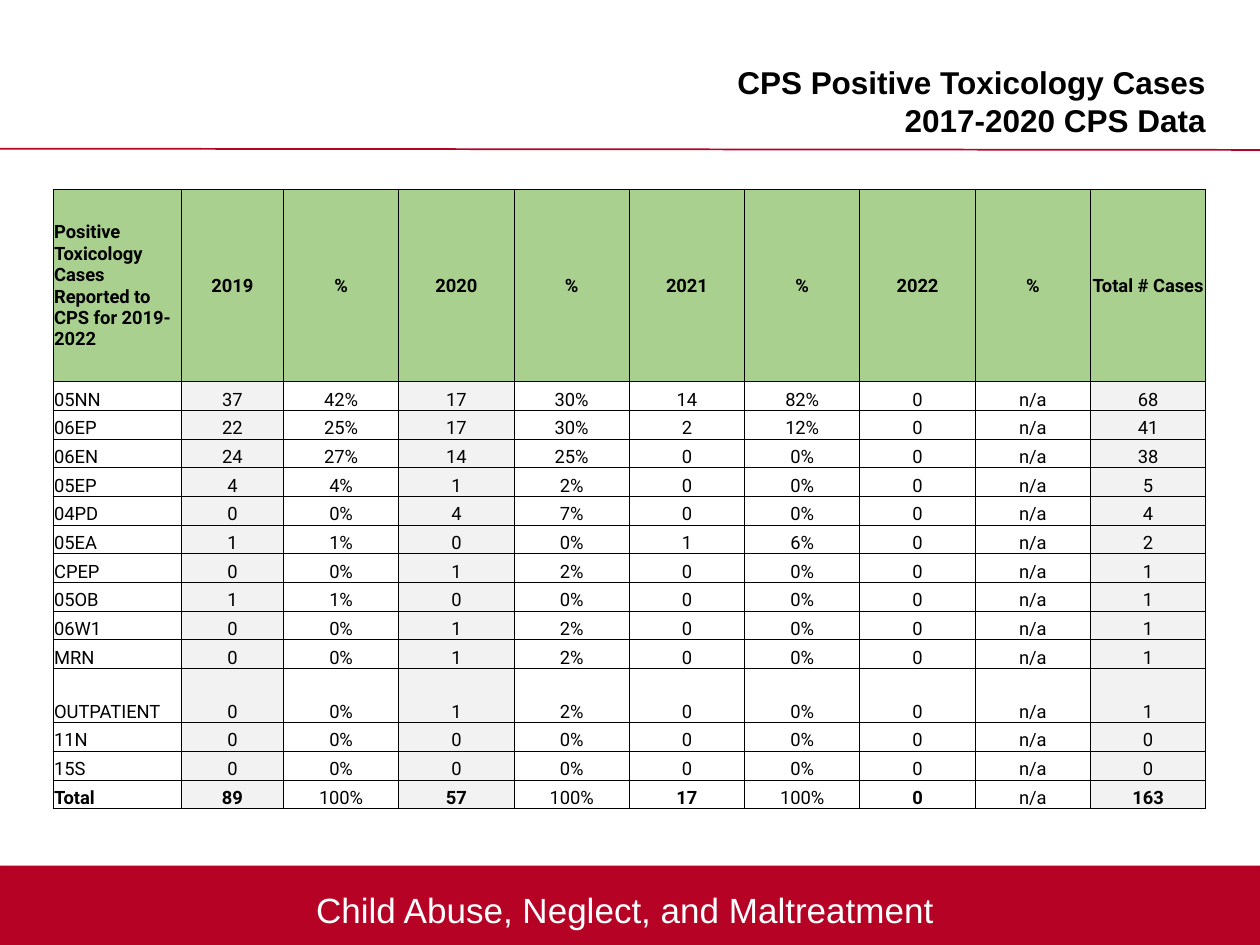
from lxml import etree
from pptx import Presentation
from pptx.dml.color import RGBColor
from pptx.enum.shapes import MSO_CONNECTOR, MSO_SHAPE
from pptx.enum.text import MSO_ANCHOR, MSO_AUTO_SIZE, PP_ALIGN
from pptx.oxml import parse_xml
from pptx.oxml.ns import nsdecls, qn
from pptx.util import Inches, Pt

LEFT, MID, RIGHT = PP_ALIGN.LEFT, PP_ALIGN.CENTER, PP_ALIGN.RIGHT
TOP, CENTRE, BASE = MSO_ANCHOR.TOP, MSO_ANCHOR.MIDDLE, MSO_ANCHOR.BOTTOM
RED, GREEN, GREY, BLACK, WHITE = "B60225", "A9D08E", "F2F2F2", "000000", "FFFFFF"

TITLE = "CPS Positive Toxicology Cases 2017-2020 CPS Data"
FOOTER = "Child Abuse, Neglect, and Maltreatment "
HEAD = ["Positive Toxicology Cases Reported to CPS for 2019-2022",
        "2019", "%", "2020", "%", "2021", "%", "2022", "%", "Total # Cases"]
BODY = [
    ["05NN", "37", "42%", "17", "30%", "14", "82%", "0", "n/a", "68"],
    ["06EP", "22", "25%", "17", "30%", "2", "12%", "0", "n/a", "41"],
    ["06EN", "24", "27%", "14", "25%", "0", "0%", "0", "n/a", "38"],
    ["05EP", "4", "4%", "1", "2%", "0", "0%", "0", "n/a", "5"],
    ["04PD", "0", "0%", "4", "7%", "0", "0%", "0", "n/a", "4"],
    ["05EA", "1", "1%", "0", "0%", "1", "6%", "0", "n/a", "2"],
    ["CPEP", "0", "0%", "1", "2%", "0", "0%", "0", "n/a", "1"],
    ["05OB", "1", "1%", "0", "0%", "0", "0%", "0", "n/a", "1"],
    ["06W1", "0", "0%", "1", "2%", "0", "0%", "0", "n/a", "1"],
    ["MRN", "0", "0%", "1", "2%", "0", "0%", "0", "n/a", "1"],
    ["OUTPATIENT", "0", "0%", "1", "2%", "0", "0%", "0", "n/a", "1"],
    ["11N", "0", "0%", "0", "0%", "0", "0%", "0", "n/a", "0"],
    ["15S", "0", "0%", "0", "0%", "0", "0%", "0", "n/a", "0"],
    ["Total", "89", "100%", "57", "100%", "17", "100%", "0", "n/a", "163"],
]
ROWS = [HEAD] + BODY
SHADED = {1, 3, 9}
WIDE, HIGH = 9.15, 4.92
FIRST = [1.02, 0.81]
TALL = {"OUTPATIENT": 0.43, HEAD[0]: 1.53}


def box(*sizes):
    return [Inches(size) for size in sizes]


def tint(color, code):
    color.rgb = RGBColor.from_string(code)


def write(frame, text, size, font, code, align, bold=False):
    para = frame.paragraphs[0]
    para.alignment = align
    para.space_before = Pt(0)
    run = para.add_run()
    run.text = text
    run.font.size = Pt(size)
    run.font.name = font
    run.font.bold = bold
    tint(run.font.color, code)


def edge(cell):
    props = cell._tc.get_or_add_tcPr()
    for side in ("lnL", "lnR", "lnT", "lnB"):
        props.append(parse_xml(
            f'<a:{side} {nsdecls("a")} w="{Pt(0.5)}"><a:solidFill>'
            f'<a:srgbClr val="{BLACK}"/></a:solidFill></a:{side}>'))


def fill(cell, row, col):
    head = row == 0
    text = ROWS[row][col]
    rate = col in range(2, 9, 2)
    bold = head or (row == len(BODY) and not rate)
    cell.margin_left = cell.margin_top = cell.margin_right = Inches(0.01)
    cell.margin_bottom = 0
    cell.vertical_anchor = CENTRE if head else BASE
    write(cell.text_frame, text, 10.5, "Roboto", BLACK, MID if col else LEFT, bold)
    edge(cell)
    if head or col in SHADED:
        cell.fill.solid()
        tint(cell.fill.fore_color, GREEN if head else GREY)
    else:
        cell.fill.background()


def main():
    deck = Presentation()
    deck.slide_width, deck.slide_height = box(10, 7.5)
    slide = deck.slides.add_slide(deck.slide_layouts[5])
    shapes = slide.shapes

    bar = shapes.add_shape(MSO_SHAPE.RECTANGLE, *box(0, 6.87, 10, 0.63))
    bar.fill.solid()
    tint(bar.fill.fore_color, RED)
    bar.line.fill.background()
    bar.shadow.inherit = False
    glow = bar._element.spPr.find(qn("a:effectLst"))
    glow.append(parse_xml(
        f'<a:outerShdw {nsdecls("a")} blurRad="{Pt(3.1)}" dist="{Pt(1.8)}" '
        f'dir="5400000" rotWithShape="0"><a:srgbClr val="{BLACK}">'
        '<a:alpha val="35000"/></a:srgbClr></a:outerShdw>'))

    rule = shapes.add_connector(MSO_CONNECTOR.STRAIGHT, *box(0, 1.18, 10, 1.19))
    rule.line.width = Pt(1)
    tint(rule.line.color, RED)
    etree.SubElement(rule._element.spPr, qn("a:effectLst"))

    title = shapes.title
    title.left, title.top, title.width, title.height = box(5.25, 0.45, 4.32, 0.58)
    frame = title.text_frame
    frame.word_wrap = True
    frame.auto_size = MSO_AUTO_SIZE.NONE
    frame.vertical_anchor = TOP
    frame.margin_left = frame.margin_right = 0
    frame.margin_top = frame.margin_bottom = Inches(0.05)
    write(frame, TITLE, 18, "Arial", BLACK, RIGHT, True)

    foot = shapes.add_textbox(*box(0, 7, 10, 0.74)).text_frame
    foot.word_wrap = True
    write(foot, FOOTER, 20, "Arial", WHITE, MID)

    count = len(HEAD)
    grid = shapes.add_table(len(ROWS), count, *box(0.42, 1.5, WIDE, HIGH)).table
    grid.first_row = grid.horz_banding = False
    rest = (WIDE - sum(FIRST)) / (count - len(FIRST))
    step = (HIGH - sum(TALL.values())) / (len(ROWS) - len(TALL))
    for col in range(count):
        grid.columns[col].width = Inches(FIRST[col] if col < len(FIRST) else rest)
    for row, texts in enumerate(ROWS):
        grid.rows[row].height = Inches(TALL.get(texts[0], step))
        for col in range(count):
            fill(grid.cell(row, col), row, col)

    deck.save("out.pptx")


if __name__ == "__main__":
    main()
